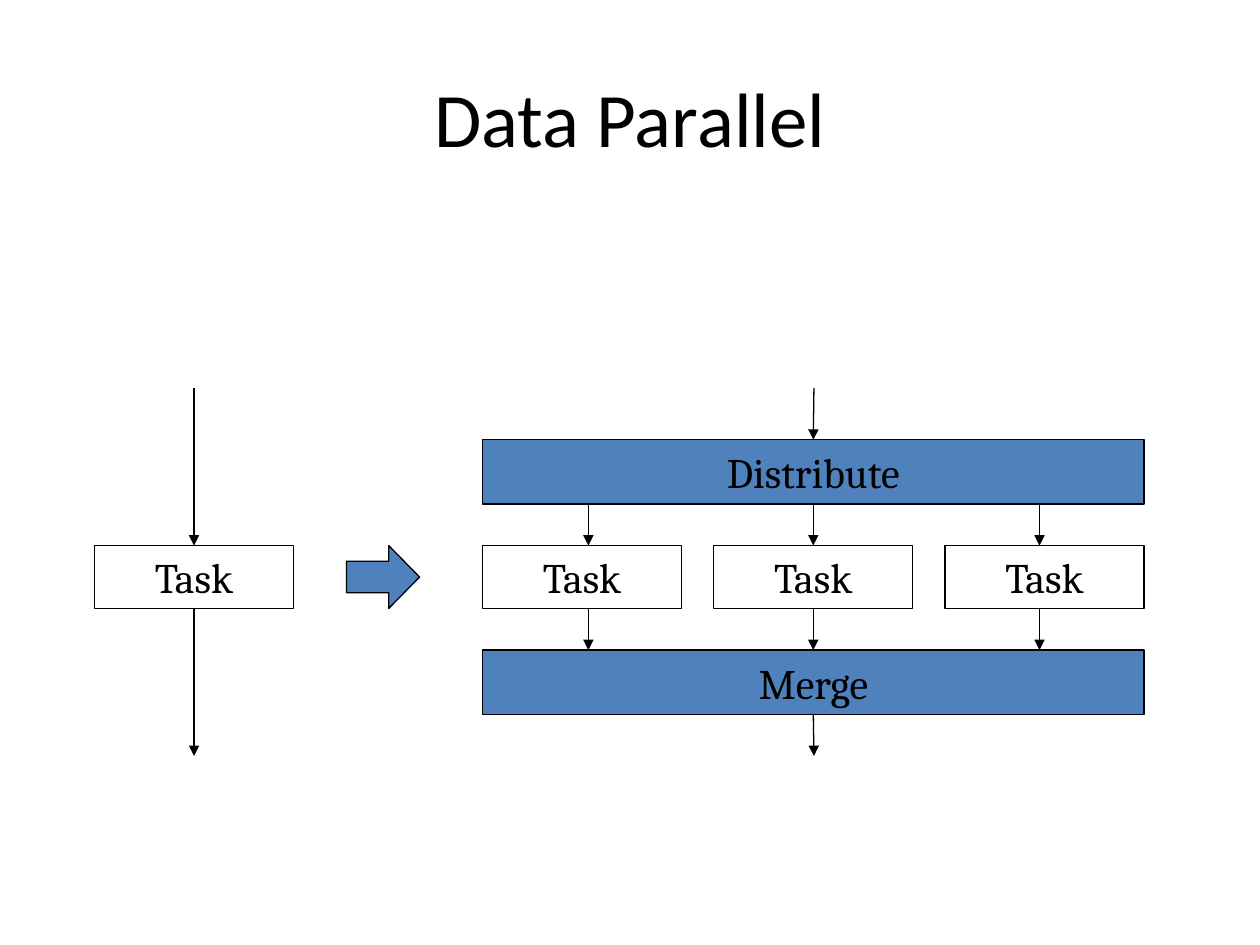
"""Build a slide that shows one task split into data-parallel tasks."""
from lxml import etree
from pptx import Presentation
from pptx.dml.color import RGBColor
from pptx.enum import shapes, text
from pptx.oxml import ns
from pptx.util import Inches, Pt

COLORS = {"ink": "000000", "blue": "4F81BD"}
TASK_Y, TASK_W, TASK_H = 4.33, 1.58, 0.5
BAR_X, BAR_W, BAR_H = 3.83, 5.25, 0.51
SPLIT_Y, MERGE_Y = 3.49, 5.16
START_Y, END_Y = 3.08, 6
LEFT_X, MID_X = 1.54, 6.46


def color(name):
    return RGBColor.from_string(COLORS[name])


def style(font, face, size):
    font.name, font.size = face, Pt(size)
    font.color.rgb = color("ink")


def outline(line):
    line.color.rgb = color("ink")
    line.width = Pt(0.75)


def add_title(slide, label):
    title = slide.shapes.title
    title.left, title.top = Inches(0.5), Inches(0.3)
    title.width, title.height = Inches(9), Inches(1.25)
    title.text_frame.text = label
    title.text_frame.vertical_anchor = text.MSO_ANCHOR.MIDDLE
    para = title.text_frame.paragraphs[0]
    para.alignment = text.PP_ALIGN.CENTER
    style(para.runs[0].font, "Calibri", 44)


def add_shape(slide, kind, x, y, w, h, fill=None):
    shape = slide.shapes.add_shape(
        kind, Inches(x), Inches(y), Inches(w), Inches(h))
    shape.shadow.inherit = False
    outline(shape.line)
    if fill:
        shape.fill.solid()
        shape.fill.fore_color.rgb = color(fill)
    else:
        shape.fill.background()
    return shape


def add_box(slide, label, x, y, w, h, fill=None):
    box = add_shape(slide, shapes.MSO_SHAPE.RECTANGLE, x, y, w, h, fill)
    frame = box.text_frame
    frame.text = label
    frame.vertical_anchor = text.MSO_ANCHOR.MIDDLE
    para = frame.paragraphs[0]
    para.alignment = text.PP_ALIGN.CENTER
    space = etree.SubElement(para._p.get_or_add_pPr(), ns.qn("a:spcBef"))
    etree.SubElement(space, ns.qn("a:spcPct"), val="50000")
    style(para.runs[0].font, "Cambria", 24)
    return box


def add_task(slide, x):
    return add_box(slide, "Task", x, TASK_Y, TASK_W, TASK_H)


def add_bar(slide, label, y):
    bar = add_box(slide, label, BAR_X, y, BAR_W, BAR_H, "blue")
    bar.text_frame.auto_size = text.MSO_AUTO_SIZE.SHAPE_TO_FIT_TEXT
    return bar


def add_arrow(slide, x, top, end, above=None, below=None):
    arrow = slide.shapes.add_connector(
        shapes.MSO_CONNECTOR.STRAIGHT,
        Inches(x), Inches(top), Inches(x), Inches(end))
    if above:
        arrow.begin_connect(above, 2)
    if below:
        arrow.end_connect(below, 0)
    outline(arrow.line)
    etree.SubElement(
        arrow.line._get_or_add_ln(), ns.qn("a:tailEnd"), type="triangle")
    etree.SubElement(arrow._element.spPr, ns.qn("a:effectLst"))


def main():
    deck = Presentation()
    deck.slide_width, deck.slide_height = Inches(10), Inches(7.5)
    slide = deck.slides.add_slide(deck.slide_layouts[5])
    add_title(slide, "Data Parallel")

    single = add_task(slide, 0.75)
    step = (BAR_W - TASK_W) / 2
    tasks = [add_task(slide, BAR_X + i * step) for i in range(3)]
    split = add_bar(slide, "Distribute", SPLIT_Y)
    merge = add_bar(slide, "Merge", MERGE_Y)

    add_arrow(slide, LEFT_X, START_Y, TASK_Y, below=single)
    add_arrow(slide, LEFT_X, TASK_Y + TASK_H, END_Y, above=single)
    add_arrow(slide, MID_X, START_Y, SPLIT_Y, below=split)
    add_arrow(slide, MID_X, SPLIT_Y + BAR_H, TASK_Y, split, tasks[1])
    add_arrow(slide, MID_X, TASK_Y + TASK_H, MERGE_Y, tasks[1], merge)
    add_arrow(slide, MID_X, MERGE_Y + BAR_H, END_Y, above=merge)
    for x in (4.67, 8.25):
        add_arrow(slide, x, SPLIT_Y + BAR_H, TASK_Y)
        add_arrow(slide, x, TASK_Y + TASK_H, MERGE_Y)

    block = add_shape(slide, shapes.MSO_SHAPE.RIGHT_ARROW,
                      2.75, TASK_Y, 0.58, TASK_H, "blue")
    block.adjustments[1] = 0.49
    deck.save("out.pptx")


if __name__ == "__main__":
    main()
